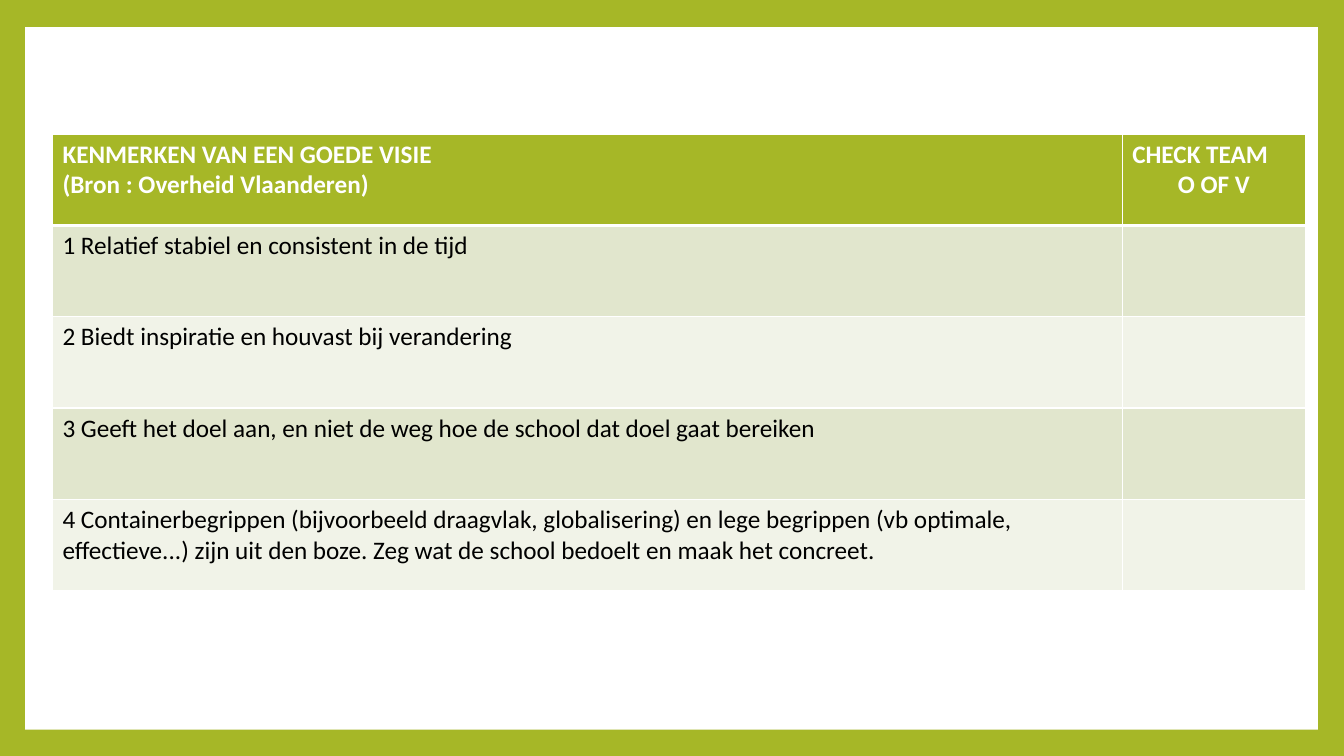
from dataclasses import dataclass

from lxml import etree
from pptx import Presentation
from pptx.dml.color import RGBColor
from pptx.enum.shapes import MSO_SHAPE
from pptx.enum.text import PP_ALIGN
from pptx.oxml.ns import qn
from pptx.table import _Cell
from pptx.util import Inches, Pt

RECT = MSO_SHAPE.RECTANGLE
LEFT, CENTER = PP_ALIGN.LEFT, PP_ALIGN.CENTER

GREEN, WHITE, BLACK = "A6B727", "FFFFFF", "000000"
BANDS = ("E1E6CD", "F1F3E8")
FONT, SIZE = "Calibri", 18
COL_WIDTHS = (10.61, 1.82)
ROW_HEIGHT = 0.906


@dataclass
class Line:
    text: str
    align: PP_ALIGN = LEFT


@dataclass
class Row:
    cells: list[list[Line]]
    fill: str
    color: str = BLACK
    bold: bool = False
    bottom: float = 1


HEADER = Row(
    [[Line("KENMERKEN VAN EEN GOEDE VISIE"), Line("(Bron : Overheid Vlaanderen)")],
     [Line("CHECK TEAM"), Line("O OF V", CENTER)]],
    GREEN, WHITE, bold=True, bottom=3)
CRITERIA = (
    "1 Relatief stabiel en consistent in de tijd",
    "2 Biedt inspiratie en houvast bij verandering",
    "3 Geeft het doel aan, en niet de weg hoe de school dat doel gaat bereiken",
    "4 Containerbegrippen (bijvoorbeeld draagvlak, globalisering) en lege begrippen "
    "(vb optimale, effectieve...) zijn uit den boze. "
    "Zeg wat de school bedoelt en maak het concreet.",
)


def rgb(value: str) -> RGBColor:
    return RGBColor.from_string(value)


def set_borders(cell: _Cell, top: float, bottom: float) -> None:
    pr = cell._tc.get_or_add_tcPr()
    widths = {"a:lnL": 1, "a:lnR": 1, "a:lnT": top, "a:lnB": bottom}
    # Borders must come before the fill in the cell properties
    for i, (tag, width) in enumerate(widths.items()):
        ln = etree.Element(qn(tag), w=str(Pt(width)))
        fill = etree.SubElement(ln, qn("a:solidFill"))
        etree.SubElement(fill, qn("a:srgbClr"), val=WHITE)
        pr.insert(i, ln)


def fill_cell(cell: _Cell, lines: list[Line], row: Row, top: float) -> None:
    cell.fill.solid()
    cell.fill.fore_color.rgb = rgb(row.fill)
    set_borders(cell, top, row.bottom)
    tf = cell.text_frame
    for i, line in enumerate(lines):
        p = tf.add_paragraph() if i else tf.paragraphs[0]
        p.alignment = line.align
        r = p.add_run()
        r.text = line.text
        r.font.name, r.font.size, r.font.bold = FONT, Pt(SIZE), row.bold
        r.font.color.rgb = rgb(row.color)


def main() -> None:
    prs = Presentation()
    prs.slide_width, prs.slide_height = Inches(13.33), Inches(7.5)
    s = prs.slides.add_slide(prs.slide_layouts[6])

    # Green frame around a white panel
    s.background.fill.solid()
    s.background.fill.fore_color.rgb = rgb(GREEN)
    sp = s.shapes.add_shape(RECT, Inches(0.25), Inches(0.27), Inches(12.82), Inches(6.97))
    sp.shadow.inherit = False
    sp.fill.solid()
    sp.fill.fore_color.rgb = rgb(WHITE)
    sp.line.fill.background()

    # Checklist table
    rows = [HEADER] + [Row([[Line(text)], []], BANDS[i % 2])
                       for i, text in enumerate(CRITERIA)]
    table = s.shapes.add_table(
        len(rows), len(COL_WIDTHS), Inches(0.52), Inches(1.33),
        Inches(sum(COL_WIDTHS)), Inches(ROW_HEIGHT * len(rows))).table
    for column, width in zip(table.columns, COL_WIDTHS):
        column.width = Inches(width)
    top = 1
    for i, row in enumerate(rows):
        table.rows[i].height = Inches(ROW_HEIGHT)
        for j, lines in enumerate(row.cells):
            fill_cell(table.cell(i, j), lines, row, top)
        top = row.bottom

    prs.save("out.pptx")


if __name__ == "__main__":
    main()
